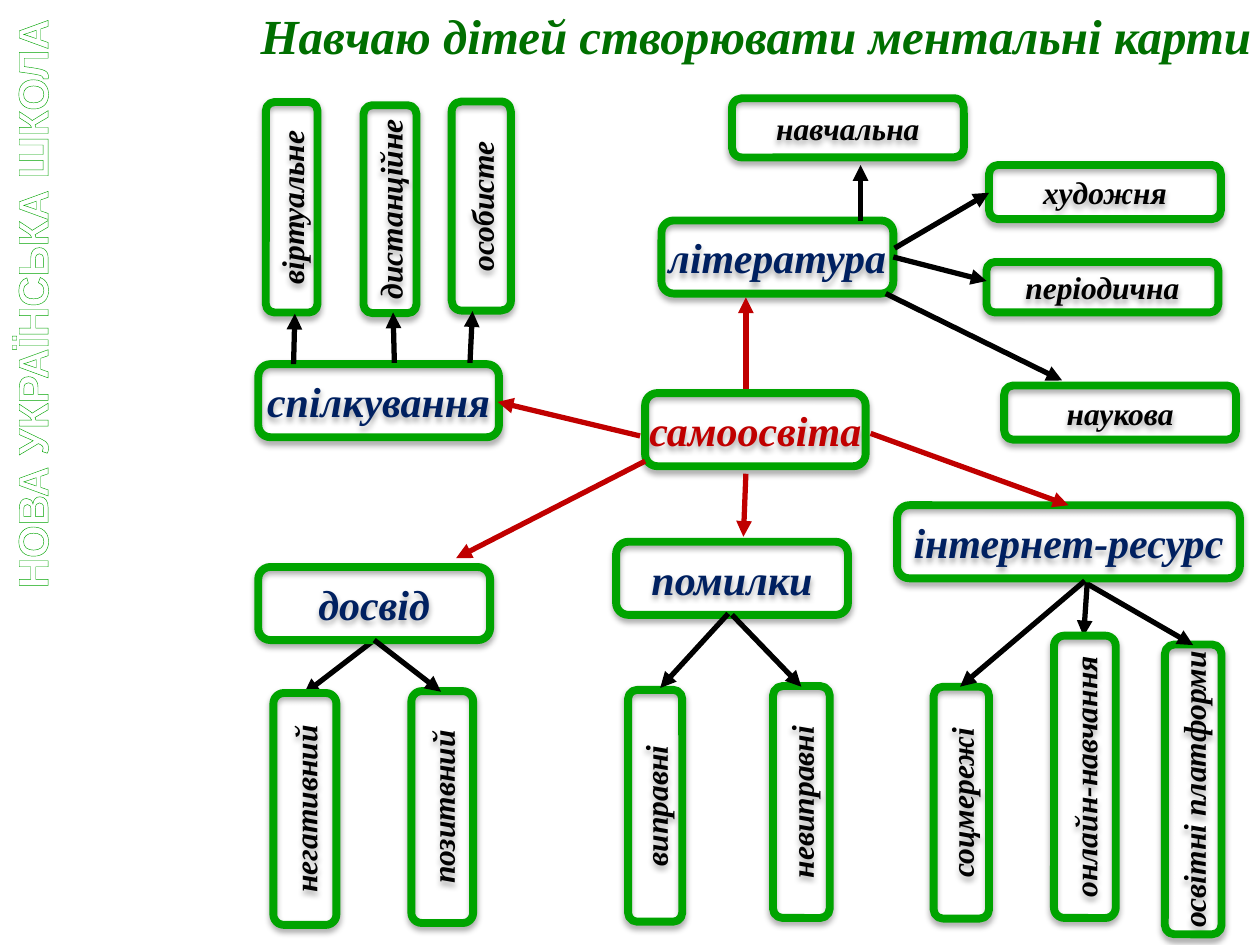
from lxml import etree
from pptx import Presentation
from pptx.dml.color import RGBColor
from pptx.enum.shapes import MSO_CONNECTOR, MSO_SHAPE
from pptx.enum.text import MSO_ANCHOR, MSO_AUTO_SIZE, PP_ALIGN
from pptx.oxml import parse_xml
from pptx.oxml.ns import nsdecls, qn
from pptx.util import Inches, Pt

ROUNDED = MSO_SHAPE.ROUNDED_RECTANGLE
STRAIGHT = MSO_CONNECTOR.STRAIGHT
MIDDLE = MSO_ANCHOR.MIDDLE
TOP = MSO_ANCHOR.TOP
CENTER = PP_ALIGN.CENTER
GROW = MSO_AUTO_SIZE.SHAPE_TO_FIT_TEXT

THEME = {
    "serif": "Times New Roman", "sans": "Arial",
    "green": "00A400", "title": "006F00", "root": "C00000",
    "branch": "002060", "leaf": "000000", "white": "FFFFFF",
    "title_size": 28, "banner_size": 24, "topic_size": 24, "leaf_size": 18,
    "border": 4.5, "arrow": 3, "outline": 0.52,
}

TITLE = ("Навчаю дітей створювати ментальні карти", 1.62, -0.31, 8.76, 1.17)
BANNER = ("НОВА УКРАЇНСЬКА ШКОЛА", -2.13, 2.16, 4.76, 0.5)

ROOT = [("самоосвіта", 5.12, 3.12, 1.75, 0.58)]
BRANCHES = [
    ("література", 5.25, 1.75, 1.84, 0.58),
    ("спілкування", 2.05, 2.89, 1.91, 0.58),
    ("досвід", 2.05, 4.5, 1.84, 0.58),
    ("помилки", 4.89, 4.3, 1.84, 0.58),
    ("інтернет-ресурс", 7.12, 4.01, 2.72, 0.58),
]
LEAVES = [
    ("навчальна", 5.81, 0.78, 1.84, 0.47),
    ("художня", 7.85, 1.31, 1.84, 0.43),
    ("періодична", 7.83, 2.08, 1.84, 0.4),
    ("наукова", 7.97, 3.06, 1.84, 0.43),
]
UPRIGHT_LEAVES = [
    ("особисте", 2.99, 1.4, 1.66, 0.47),
    ("дистанційне", 2.27, 1.45, 1.65, 0.42),
    ("віртуальне", 1.48, 1.44, 1.67, 0.41),
    ("позитвний", 2.59, 6.16, 1.84, 0.49),
    ("негативний", 1.5, 6.17, 1.84, 0.5),
    ("виправні", 4.28, 6.18, 1.84, 0.43),
    ("невиправні", 5.44, 6.14, 1.84, 0.45),
    ("соцмережі", 6.71, 6.15, 1.84, 0.44),
    ("онлайн-навчання", 7.49, 5.92, 2.24, 0.49),
    ("освітні платформи", 8.32, 6.04, 2.3, 0.45),
]

ROOT_ARROWS = [
    (5.92, 3.09, 5.92, 2.36), (5.08, 3.46, 3.95, 3.19), (5.12, 3.66, 3.62, 4.43),
    (6.91, 3.44, 8.48, 4.01), (5.92, 3.76, 5.9, 4.26),
]
COVERED_ARROWS = [(2.97, 5.08, 2.41, 5.51), (8.63, 4.61, 8.6, 5.05)]
LEAF_ARROWS = [
    (6.83, 1.75, 6.83, 1.31), (7.1, 1.97, 7.85, 1.53),
    (7.09, 2.04, 7.83, 2.23), (7.03, 2.33, 8.43, 3.02),
    (3.73, 2.88, 3.75, 2.47), (3.13, 2.88, 3.12, 2.48), (2.33, 2.89, 2.34, 2.49),
    (2.97, 5.08, 3.5, 5.49),
    (5.78, 4.87, 5.24, 5.46), (5.81, 4.88, 6.36, 5.45),
    (8.61, 4.61, 7.62, 5.45), (8.64, 4.64, 9.47, 5.12),
]


def color(name):
    return RGBColor.from_string(THEME[name])


def write(shape, text, size, color_name, font="serif", italic=True, wrap=False, anchor=MIDDLE):
    frame = shape.text_frame
    frame.word_wrap = wrap
    frame.vertical_anchor = anchor
    paragraph = frame.paragraphs[0]
    paragraph.alignment = CENTER
    run = paragraph.add_run()
    run.text = text
    run.font.size = Pt(THEME[size])
    run.font.name = THEME[font]
    run.font.bold = True
    run.font.italic = italic
    run.font.color.rgb = color(color_name)
    return run


def add_shadow(shape):
    shape.shadow.inherit = False
    effects = shape._element.spPr.find(qn("a:effectLst"))
    effects.append(parse_xml(
        f'<a:outerShdw {nsdecls("a")} blurRad="{Pt(3.5)}" dist="{Pt(2.2)}" dir="5400000" '
        'rotWithShape="0"><a:srgbClr val="000000"><a:alpha val="32000"/></a:srgbClr>'
        '</a:outerShdw>'))


def add_boxes(slide, boxes, size, color_name, rotation=0):
    for text, *place in boxes:
        shape = slide.shapes.add_shape(ROUNDED, *map(Inches, place))
        shape.rotation = rotation
        shape.fill.background()
        shape.line.color.rgb = color("green")
        shape.line.width = Pt(THEME["border"])
        add_shadow(shape)
        write(shape, text, size, color_name)


def add_arrows(slide, arrows, color_name):
    for ends in arrows:
        connector = slide.shapes.add_connector(STRAIGHT, *map(Inches, ends))
        connector.line.color.rgb = color(color_name)
        connector.line.width = Pt(THEME["arrow"])
        etree.SubElement(connector.line._get_or_add_ln(), qn("a:tailEnd"), type="triangle")
        etree.SubElement(connector._element.spPr, qn("a:effectLst"))


def add_banner(slide):
    text, *place = BANNER
    shape = slide.shapes.add_textbox(*map(Inches, place))
    shape.rotation = 270
    run = write(shape, text, "banner_size", "white", "sans", italic=False, anchor=TOP)
    shape.text_frame.auto_size = GROW
    run.font._element.insert(0, parse_xml(
        f'<a:ln {nsdecls("a")} w="{Pt(THEME["outline"])}"><a:solidFill>'
        f'<a:srgbClr val="{THEME["green"]}"/></a:solidFill></a:ln>'))


def add_title(slide):
    text, *place = TITLE
    shape = slide.shapes.add_textbox(*map(Inches, place))
    write(shape, text, "title_size", "title", wrap=True)


def main():
    presentation = Presentation()
    presentation.slide_width = Inches(10)
    presentation.slide_height = Inches(7.5)
    slide = presentation.slides.add_slide(presentation.slide_layouts[6])
    add_banner(slide)
    add_arrows(slide, COVERED_ARROWS, "leaf")
    add_boxes(slide, ROOT, "topic_size", "root")
    add_boxes(slide, BRANCHES, "topic_size", "branch")
    add_boxes(slide, LEAVES, "leaf_size", "leaf")
    add_boxes(slide, UPRIGHT_LEAVES, "leaf_size", "leaf", rotation=270)
    add_arrows(slide, ROOT_ARROWS, "root")
    add_arrows(slide, LEAF_ARROWS, "leaf")
    add_title(slide)
    presentation.save("out.pptx")


if __name__ == "__main__":
    main()
